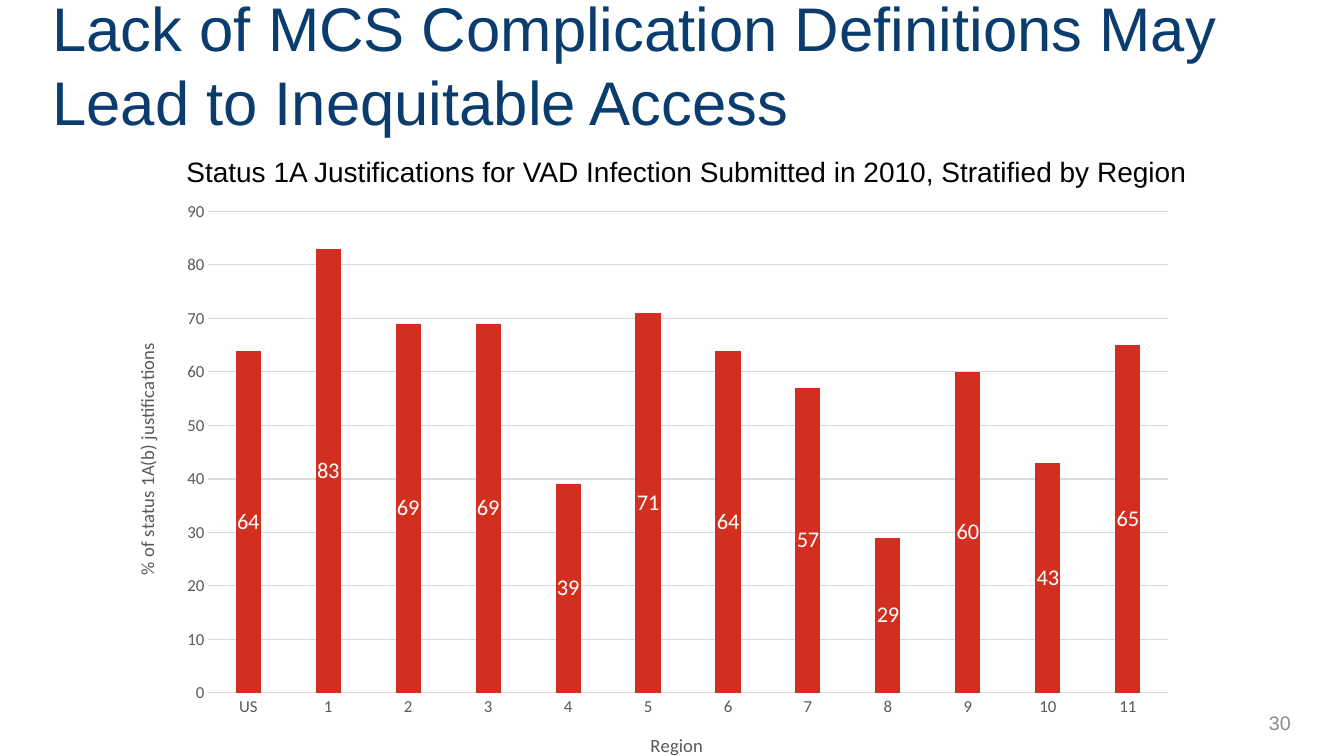
from dataclasses import dataclass

from lxml import etree
from pptx import Presentation
from pptx import util as u
from pptx.chart.data import CategoryChartData
from pptx.dml.color import RGBColor
from pptx.enum import chart as ch
from pptx.enum import text
from pptx.oxml import parse_xml
from pptx.oxml.ns import nsdecls, qn


@dataclass(frozen=True)
class Theme:
    navy: str = "0A3C6E"
    red: str = "D32F20"
    black: str = "000000"
    white: str = "FFFFFF"
    gray: str = "8C8C8C"
    axis: str = "595959"
    grid: str = "D9D9D9"
    heading: str = "Arial"
    chart: str = "Calibri"
    title_size: float = 44
    subtitle_size: float = 20
    number_size: float = 14
    label_size: float = 16
    axis_size: float = 12
    axis_title_size: float = 13.3


theme = Theme()


def format_text(font, size, color, name=theme.chart):
    font.name = name
    font.size = u.Pt(size)
    font.bold = False
    font.color.rgb = RGBColor.from_string(color)


def add_layout(parent, x, y, width=None, height=None):
    layout = parse_xml(f"<c:layout {nsdecls('c')}><c:manualLayout/></c:layout>")
    manual = layout[0]
    settings = [("xMode", "edge"), ("yMode", "edge"), ("x", x), ("y", y)]
    if width:
        settings = [("layoutTarget", "inner")] + settings + [("w", width), ("h", height)]
    for tag, value in settings:
        etree.SubElement(manual, qn(f"c:{tag}")).set("val", str(value))
    for existing in parent.findall(qn("c:layout")):
        parent.remove(existing)
    title_text = parent.find(qn("c:tx"))
    parent.insert(0 if title_text is None else 1, layout)


presentation = Presentation()
presentation.slide_width = u.Inches(13.33)
presentation.slide_height = u.Inches(7.5)
slide = presentation.slides.add_slide(presentation.slide_layouts[5])

title = slide.shapes.title
title.left, title.top = u.Inches(0.42), u.Inches(0.17)
title.width, title.height = u.Inches(12.74), u.Inches(0.93)
title.text_frame.text = "Lack of MCS Complication Definitions May Lead to Inequitable Access"
title.text_frame.auto_size = text.MSO_AUTO_SIZE.NONE
title.text_frame.vertical_anchor = text.MSO_ANCHOR.MIDDLE
paragraph = title.text_frame.paragraphs[0]
paragraph.alignment = text.PP_ALIGN.LEFT
format_text(paragraph.runs[0].font, theme.title_size, theme.navy, theme.heading)

regions = ["US"] + [str(number) for number in range(1, 12)]
percentages = [64, 83, 69, 69, 39, 71, 64, 57, 29, 60, 43, 65]
chart_data = CategoryChartData()
chart_data.categories = regions
chart_data.add_series("Series 1", percentages)
chart = slide.shapes.add_chart(
    ch.XL_CHART_TYPE.COLUMN_CLUSTERED,
    u.Inches(0.78), u.Inches(1.82), u.Inches(10.99), u.Inches(5.92), chart_data,
).chart
chart.has_legend = False
chart.has_title = False
format_text(chart.font, theme.axis_size, theme.black)

plot = chart.plots[0]
plot.gap_width = 219
plot.overlap = -27
plot.vary_by_categories = False
add_layout(plot._element.getparent(), 0.117, 0.047, 0.866, 0.807)

series = plot.series[0]
series.format.fill.solid()
series.format.fill.fore_color.rgb = RGBColor.from_string(theme.red)
labels = series.data_labels
labels.show_value = True
labels.number_format = "0"
labels.number_format_is_linked = False
labels.position = ch.XL_LABEL_POSITION.CENTER
format_text(labels.font, theme.label_size, theme.white)

axis_titles = [
    (chart.category_axis, "Region", 0.513, 0.915),
    (chart.value_axis, "% of status 1A(b) justifications", 0.047, 0.262),
]
for axis, caption, x, y in axis_titles:
    axis.major_tick_mark = ch.XL_TICK_MARK.NONE
    axis.minor_tick_mark = ch.XL_TICK_MARK.NONE
    format_text(axis.tick_labels.font, theme.axis_size, theme.axis)
    axis.axis_title.text_frame.text = caption
    run = axis.axis_title.text_frame.paragraphs[0].runs[0]
    format_text(run.font, theme.axis_title_size, theme.axis)
    add_layout(axis.axis_title._element, x, y)

value_axis = chart.value_axis
value_axis.minimum_scale, value_axis.maximum_scale = 0, 90
value_axis.major_unit = 10
value_axis.format.line.fill.background()
for line in (chart.category_axis.format.line, value_axis.major_gridlines.format.line):
    line.color.rgb = RGBColor.from_string(theme.grid)
    line.width = u.Pt(0.75)

captions = [
    ("30", 10.64, 6.97, 2.26, 0.4, theme.number_size, theme.gray,
     text.PP_ALIGN.RIGHT, text.MSO_ANCHOR.MIDDLE),
    ("Status 1A Justifications for VAD Infection Submitted in 2010, Stratified by Region",
     1.75, 1.48, 10.47, 0.44, theme.subtitle_size, theme.black,
     text.PP_ALIGN.LEFT, text.MSO_ANCHOR.TOP),
]
for caption, left, top, width, height, size, color, alignment, anchor in captions:
    shape = slide.shapes.add_textbox(
        u.Inches(left), u.Inches(top), u.Inches(width), u.Inches(height))
    shape.text_frame.word_wrap = True
    shape.text_frame.vertical_anchor = anchor
    paragraph = shape.text_frame.paragraphs[0]
    paragraph.text = caption
    paragraph.alignment = alignment
    format_text(paragraph.runs[0].font, size, color, theme.heading)

presentation.save("out.pptx")
